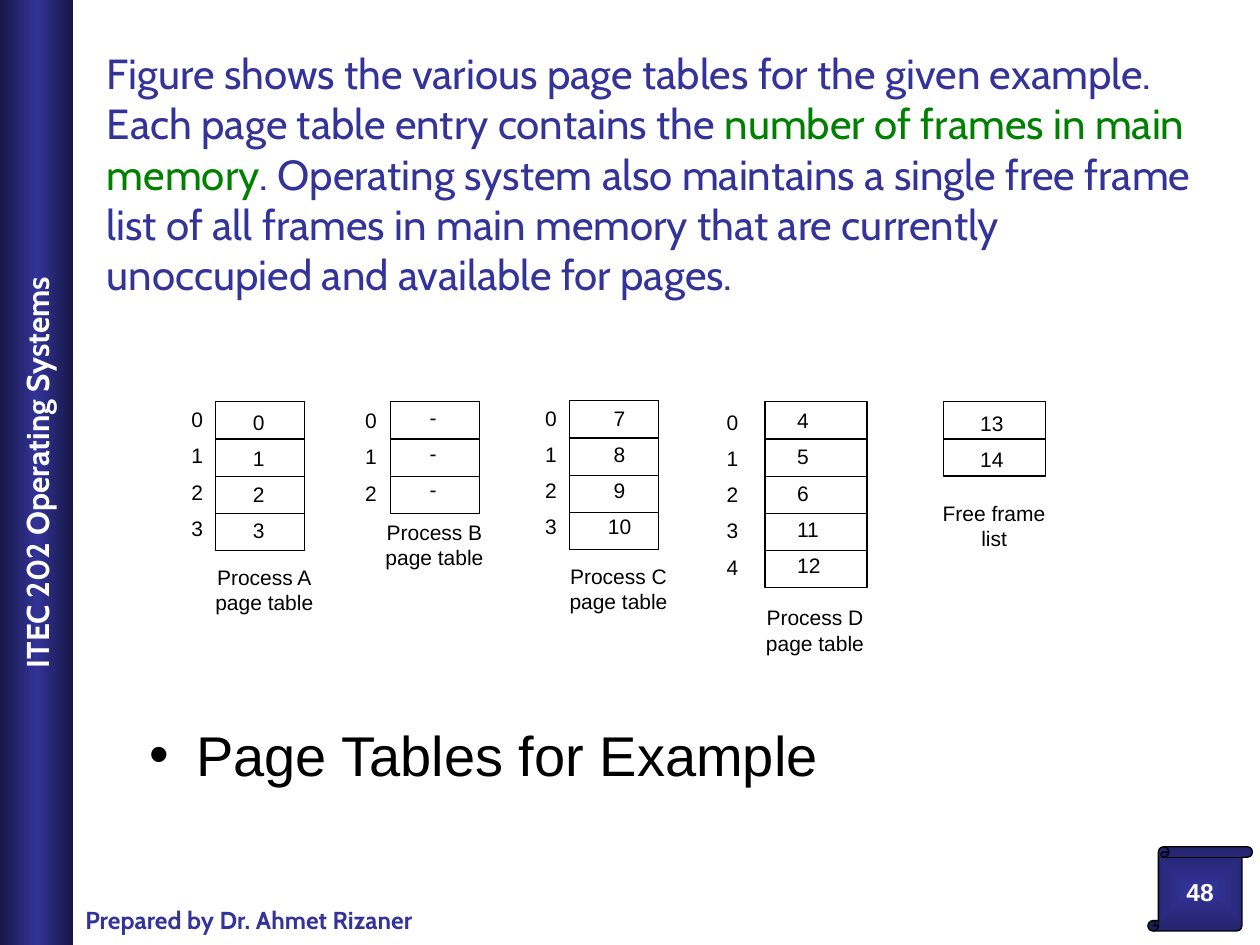
import dataclasses

import pptx
import pptx.dml.color
import pptx.enum.shapes
import pptx.enum.text
import pptx.oxml
import pptx.oxml.ns
import pptx.util

Cm = pptx.util.Cm
Pt = pptx.util.Pt
RGBColor = pptx.dml.color.RGBColor
Shape = pptx.enum.shapes.MSO_SHAPE
Align = pptx.enum.text.PP_ALIGN
Anchor = pptx.enum.text.MSO_ANCHOR

BLACK = RGBColor(0x00, 0x00, 0x00)
WHITE = RGBColor(0xFF, 0xFF, 0xFF)
BLUE = RGBColor(0x33, 0x33, 0x99)
DARK_BLUE = RGBColor(0x24, 0x24, 0x6D)
NIGHT_BLUE = RGBColor(0x17, 0x17, 0x44)
GREEN = RGBColor(0x00, 0x80, 0x00)

SLIDE_WIDTH, SLIDE_HEIGHT = 25.4, 19.05
ROW_HEIGHT = 0.75
ROW_SPACING = 1.44
CAPTION_WIDTH, CAPTION_HEIGHT = 3.1, 1.5
ACROSS = '<a:lin ang="5400000" scaled="1"/>'
FROM_CENTRE = ('<a:path path="rect"><a:fillToRect l="50000" t="50000" '
               'r="50000" b="50000"/></a:path>')


@dataclasses.dataclass
class FrameTable:
    """A stack of cells; each position is (left, top) in centimetres."""
    corner: tuple
    width: float
    values: list
    value_corner: tuple
    caption: list
    caption_corner: tuple
    index_corner: tuple = None
    align: Align = Align.LEFT


TABLES = [
    FrameTable((4.34, 8.1), 1.8, ["0", "1", "2", "3"], (4.85, 7.9),
               ["Process A", "page table"], (3.78, 11.25), (3.61, 7.85)),
    FrameTable((7.87, 8.1), 1.8, ["-", "-", "-"], (8.41, 7.8),
               ["Process B", "page table"], (7.21, 10.34), (7.11, 7.87)),
    FrameTable((11.48, 8.08), 1.8, ["7", "8", "9", "10"], (11.84, 7.82),
               ["Process C", "page table"], (10.92, 11.23), (10.74, 7.82),
               Align.CENTER),
    FrameTable((15.42, 8.1), 2.06, ["4", "5", "6", "11", "12"], (15.82, 7.87),
               ["Process D", "page table"], (14.88, 12.07), (14.4, 7.9)),
    FrameTable((19.02, 8.1), 2.06, ["13", "14"], (19.51, 7.92),
               ["Free frame", "list"], (18.49, 9.96)),
]


def add_run(para, text, size, color, name="Arial", bold=False):
    span = para.add_run()
    span.text = text
    span.font.size = Pt(size)
    span.font.name = name
    span.font.bold = bold
    span.font.color.rgb = color


def add_shape(slide, kind, left, top, width, height):
    shape = slide.shapes.add_shape(kind, Cm(left), Cm(top), Cm(width), Cm(height))
    shape.shadow.inherit = False
    return shape


def set_outline(line):
    line.color.rgb = BLACK
    line.width = Pt(0.75)


def set_gradient(shape, stops, direction):
    """Fill with (percent, colour) stops along a DrawingML direction element."""
    marks = "".join(
        f'<a:gs pos="{percent * 1000}"><a:srgbClr val="{color}"/></a:gs>'
        for percent, color in stops)
    gradient = pptx.oxml.parse_xml(
        f'<a:gradFill {pptx.oxml.ns.nsdecls("a")} rotWithShape="1">'
        f'<a:gsLst>{marks}</a:gsLst>{direction}</a:gradFill>')
    shape._element.spPr.find(pptx.oxml.ns.qn("a:prstGeom")).addnext(gradient)


def set_label(shape, text, size, name):
    frame = shape.text_frame
    frame.word_wrap = False
    frame.vertical_anchor = Anchor.MIDDLE
    para = frame.paragraphs[0]
    para.alignment = Align.CENTER
    add_run(para, text, size, WHITE, name, True)


def add_text(slide, corner, width, height, lines, align, spacing=1.0):
    left, top = corner
    box = slide.shapes.add_textbox(Cm(left), Cm(top), Cm(width), Cm(height))
    frame = box.text_frame
    frame.word_wrap = True
    for number, line in enumerate(lines):
        para = frame.add_paragraph() if number else frame.paragraphs[0]
        para.alignment = align
        para.line_spacing = spacing
        add_run(para, line, 12, BLACK)


def add_divider(slide, left, right, height):
    line = slide.shapes.add_connector(
        pptx.enum.shapes.MSO_CONNECTOR.STRAIGHT,
        Cm(left), Cm(height), Cm(right), Cm(height))
    set_outline(line.line)
    line._element.spPr.append(pptx.oxml.parse_xml(
        f'<a:effectLst {pptx.oxml.ns.nsdecls("a")}/>'))


def add_frame_table(slide, table):
    left, top = table.corner
    count = len(table.values)
    height = count * ROW_HEIGHT
    box = add_shape(slide, Shape.RECTANGLE, left, top, table.width, height)
    box.fill.solid()
    box.fill.fore_color.rgb = WHITE
    set_outline(box.line)
    for row in range(1, count):
        add_divider(slide, left, left + table.width, top + row * ROW_HEIGHT)
    text_height = height + 0.37
    if table.index_corner:
        indexes = [str(row) for row in range(count)]
        add_text(slide, table.index_corner, 0.76, text_height, indexes,
                 Align.LEFT, ROW_SPACING)
    add_text(slide, table.value_corner, 1.3, text_height, table.values,
             table.align, ROW_SPACING)
    add_text(slide, table.caption_corner, CAPTION_WIDTH, CAPTION_HEIGHT,
             table.caption, Align.CENTER)


def add_sidebar(slide):
    width = 1.47
    bar = add_shape(slide, Shape.RECTANGLE, (width - SLIDE_HEIGHT) / 2,
                    (SLIDE_HEIGHT - width) / 2, SLIDE_HEIGHT, width)
    bar.rotation = 270
    bar.line.fill.background()
    set_gradient(bar, [(0, NIGHT_BLUE), (50, BLUE), (100, NIGHT_BLUE)], ACROSS)
    set_label(bar, "ITEC 202 Operating Systems", 18, "Cabin")


def add_footer(slide):
    box = slide.shapes.add_textbox(Cm(1.47), Cm(18.11), Cm(8.23), Cm(0.84))
    box.text_frame.word_wrap = False
    add_run(box.text_frame.paragraphs[0], "Prepared by Dr. Ahmet Rizaner",
            14, BLUE, "Cabin", True)


def add_page_number(slide):
    scroll = add_shape(slide, Shape.VERTICAL_SCROLL, 23.14, 17.07, 2.11, 1.7)
    set_outline(scroll.line)
    set_gradient(scroll, [(0, BLUE), (100, DARK_BLUE)], FROM_CENTRE)
    set_label(scroll, "48", 14, "Arial")


def place(holder, left, top, width, height, anchor):
    """Move a placeholder and return its first paragraph."""
    holder.left, holder.top = Cm(left), Cm(top)
    holder.width, holder.height = Cm(width), Cm(height)
    frame = holder.text_frame
    frame.auto_size = pptx.enum.text.MSO_AUTO_SIZE.NONE
    frame.vertical_anchor = anchor
    para = frame.paragraphs[0]
    para.alignment = Align.LEFT
    para.space_before = Pt(0)
    return para


def fill_title(slide):
    para = place(slide.shapes.title, 1.9, 0.85, 22.43, 5.29, Anchor.MIDDLE)
    for text, color in [
        ("Figure shows the various page tables for the given example. "
         "Each page table entry contains the ", BLUE),
        ("number of frames in main memory", GREEN),
        (". Operating system also maintains a single free frame list of all "
         "frames in main memory that are currently unoccupied and available "
         "for pages.", BLUE),
    ]:
        add_run(para, text, 24, color, "Cabin")


def fill_body(slide):
    para = place(slide.placeholders[1], 2.75, 14.39, 16.3, 3.39, Anchor.TOP)
    add_run(para, "Page Tables for Example", 32, BLACK)


def main():
    deck = pptx.Presentation()
    deck.slide_width, deck.slide_height = Cm(SLIDE_WIDTH), Cm(SLIDE_HEIGHT)
    page = deck.slides.add_slide(deck.slide_layouts[1])
    add_sidebar(page)
    add_footer(page)
    add_page_number(page)
    fill_title(page)
    fill_body(page)
    for table in TABLES:
        add_frame_table(page, table)
    deck.save("out.pptx")


if __name__ == "__main__":
    main()
